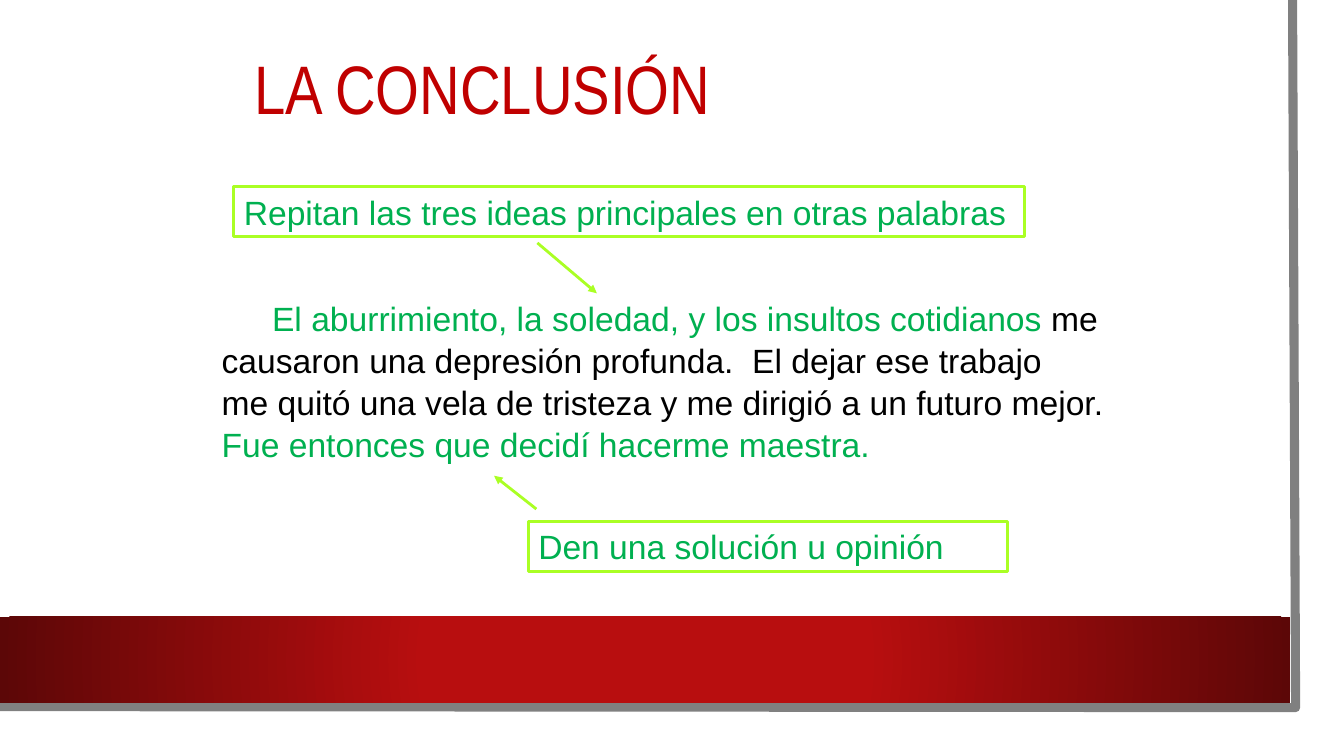
from lxml import etree
from pptx import Presentation
from pptx.dml.color import RGBColor
from pptx.enum.shapes import MSO_CONNECTOR, MSO_SHAPE
from pptx.enum.text import MSO_ANCHOR, PP_ALIGN
from pptx.oxml import parse_xml
from pptx.oxml.ns import nsdecls, qn
from pptx.util import Inches, Pt

RECT = MSO_SHAPE.RECTANGLE
LINE = MSO_CONNECTOR.STRAIGHT
LEFT = PP_ALIGN.LEFT
TOP, MIDDLE = MSO_ANCHOR.TOP, MSO_ANCHOR.MIDDLE

WHITE = RGBColor(0xFF, 0xFF, 0xFF)
BLACK = RGBColor(0, 0, 0)
GREY = RGBColor(0x80, 0x80, 0x80)
RED = RGBColor(0xC0, 0, 0)
GREEN = RGBColor(0, 0xB0, 0x50)
LIME = RGBColor(0xAA, 0xFF, 0x24)
GLOW = RGBColor(0xB8, 0x0E, 0x0F)
DARK = RGBColor(0x5C, 0x07, 0x07)

WIDE, HIGH = 13.33, 7.5
TITLE = "LA CONCLUSIÓN"
BODY = [
    [("El aburrimiento, la soledad, y los insultos cotidianos ", GREEN),
     ("me causaron una depresión profunda.  El dejar ese trabajo", BLACK)],
    [("me quitó una vela de tristeza y me dirigió a un futuro mejor.", BLACK)],
    [("Fue entonces que decidí hacerme maestra.", GREEN)],
]
# text, left, top, width, wrap
LABELS = [
    ("Repitan las tres ideas principales en otras palabras", 2.32, 1.85, 7.84, False),
    ("Den una solución u opinión", 5.24, 5.17, 4.75, True),
]
LABEL_HIGH = 0.5
# from x, from y, to x, to y
ARROWS = [(5.33, 2.41, 5.92, 2.91), (5.32, 5.05, 4.9, 4.72)]
EDGE = [(12.82, 0), (12.85, 7.02), (-0.03, 7.01)]
SHEET = (0, 0, 13.1, 7.27)
BAND = (0, 6.12, 12.8, 0.85)


def inch(*nums):
    return [Inches(n) for n in nums]


def write(frame, paras, size=24, font="Arial", anchor=TOP, wrap=True,
          space=None, indent=0):
    """Fill a frame with paragraphs, each a list of (text, colour) runs."""
    frame.word_wrap = wrap
    frame.vertical_anchor = anchor
    for i, runs in enumerate(paras):
        para = frame.add_paragraph() if i else frame.paragraphs[0]
        para.alignment = LEFT
        para.line_spacing = space
        if indent and not i:
            para._p.get_or_add_pPr().set("indent", str(Inches(indent)))
        for text, color in runs:
            run = para.add_run()
            run.text = text
            run.font.size = Pt(size)
            run.font.name = font
            run.font.color.rgb = color


def box(shapes, place, fill=None, line=None):
    shape = shapes.add_shape(RECT, *inch(*place))
    shape.shadow.inherit = False
    if fill is None:
        shape.fill.background()
    else:
        shape.fill.solid()
        shape.fill.fore_color.rgb = fill
    if line is None:
        shape.line.fill.background()
    else:
        shape.line.color.rgb = line
        shape.line.width = Pt(2)
    return shape


def glow(shape):
    """Give a shape a fill that darkens from its centre outwards."""
    old = shape._element.spPr.find(qn("a:solidFill"))
    old.getparent().replace(old, parse_xml(
        f'<a:gradFill {nsdecls("a")} rotWithShape="1"><a:gsLst>'
        f'<a:gs pos="34000"><a:srgbClr val="{GLOW}"/></a:gs>'
        f'<a:gs pos="100000"><a:srgbClr val="{DARK}"/></a:gs></a:gsLst>'
        '<a:path path="circle"><a:fillToRect l="50000" t="50000" '
        'r="50000" b="50000"/></a:path></a:gradFill>'))


def backdrop(shapes):
    box(shapes, SHEET, WHITE)
    first, *rest = [inch(*point) for point in EDGE]
    pen = shapes.build_freeform(*first)
    pen.add_line_segments(rest, close=False)
    edge = pen.convert_to_shape()
    edge.shadow.inherit = False
    edge.fill.background()
    edge.line.color.rgb = GREY
    edge.line.width = Pt(6.5)
    glow(box(shapes, BAND, GLOW))


def arrow(shapes, ends):
    link = shapes.add_connector(LINE, *inch(*ends))
    link.line.color.rgb = LIME
    link.line.width = Pt(2)
    props = link._element.spPr
    etree.SubElement(props.find(qn("a:ln")), qn("a:tailEnd"), type="triangle")
    etree.SubElement(props, qn("a:effectLst"))


def main():
    deck = Presentation()
    deck.slide_width, deck.slide_height = inch(WIDE, HIGH)
    slide = deck.slides.add_slide(deck.slide_layouts[5])
    shapes = slide.shapes
    backdrop(shapes)

    title = shapes.title
    shapes._spTree.append(title._element)
    title.left, title.top, title.width, title.height = inch(2.42, -0.12, 8.5, 2.08)
    write(title.text_frame, [[(TITLE, RED)]], size=49, font="Arial Narrow",
          anchor=MIDDLE, space=0.9)

    body = shapes.add_textbox(*inch(2.1, 2.89, 8.99, 1.72))
    write(body.text_frame, BODY, space=1.04, indent=0.5)

    for text, left, top, width, wrap in LABELS:
        label = box(shapes, (left, top, width, LABEL_HIGH), line=LIME)
        write(label.text_frame, [[(text, GREEN)]], wrap=wrap)
    for ends in ARROWS:
        arrow(shapes, ends)
    deck.save("out.pptx")


if __name__ == "__main__":
    main()
